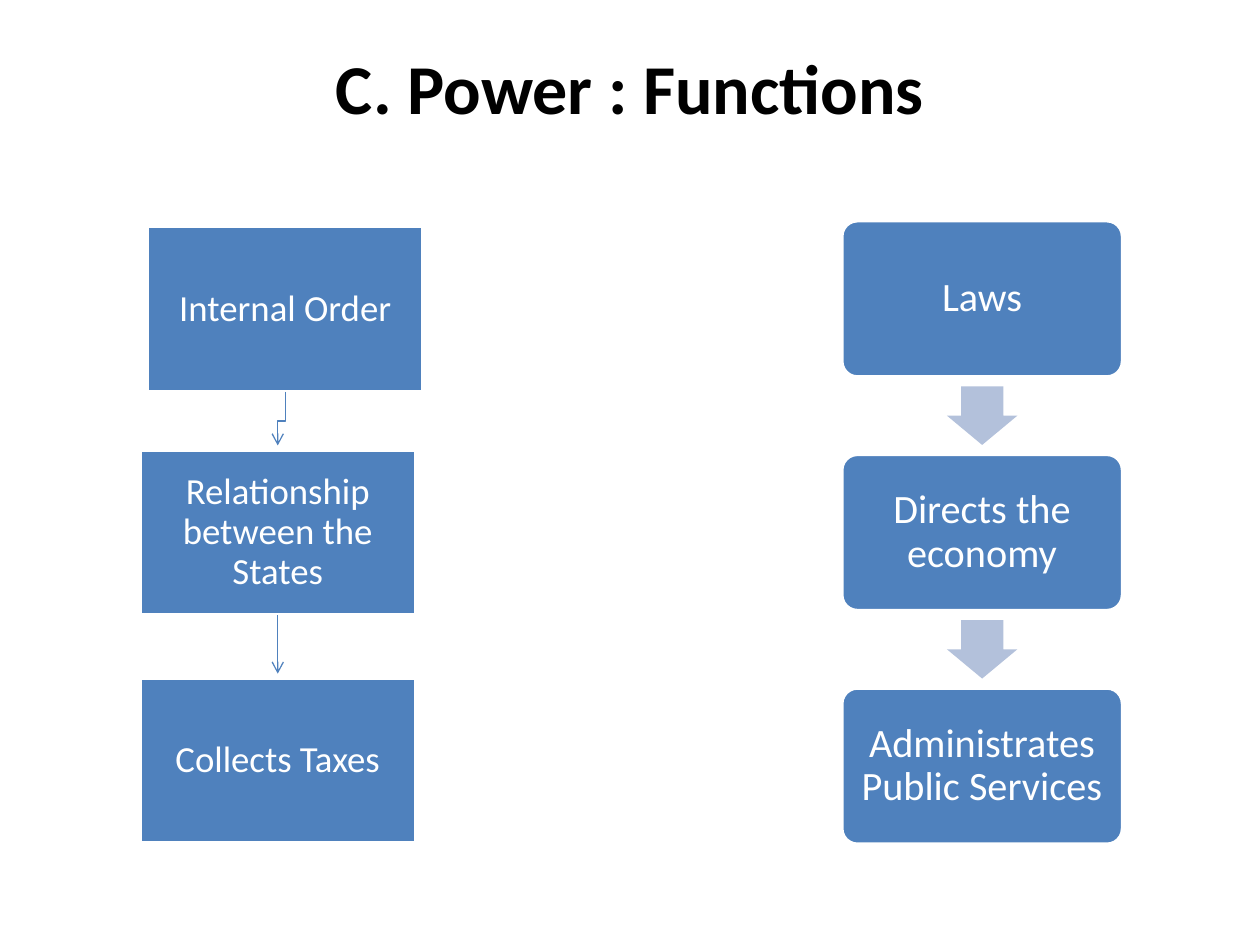
from dataclasses import dataclass

from lxml import etree
from pptx import Presentation
from pptx.dml.color import RGBColor
from pptx.enum.shapes import MSO_CONNECTOR, MSO_SHAPE
from pptx.enum.text import MSO_ANCHOR, PP_ALIGN
from pptx.oxml.ns import qn
from pptx.util import Cm, Pt

RECTANGLE = MSO_SHAPE.RECTANGLE
ROUNDED_RECTANGLE = MSO_SHAPE.ROUNDED_RECTANGLE
DOWN_ARROW = MSO_SHAPE.DOWN_ARROW
STRAIGHT = MSO_CONNECTOR.STRAIGHT
CENTER = PP_ALIGN.CENTER
MIDDLE = MSO_ANCHOR.MIDDLE
BOTTOM_SITE = 0 + 2

FONT = "Calibri"
COLORS = {"title": "000000", "box": "4F81BD", "arrow": "B3C1DB", "white": "FFFFFF"}


@dataclass(frozen=True)
class Box:
    label: str
    left: float
    top: float


@dataclass(frozen=True)
class BoxStyle:
    preset: int
    width: float
    height: float
    margin: float
    font_size: int


FUNCTION_STYLE = BoxStyle(RECTANGLE, 5.56, 3.33, 0.41, 21)
PROCESS_STYLE = BoxStyle(ROUNDED_RECTANGLE, 5.66, 3.15, 0.25, 23)

FUNCTIONS = [
    Box("Internal Order", 2.97, 4.57),
    Box("Relationship between the States", 2.82, 9.07),
    Box("Collects Taxes", 2.82, 13.67),
]
PROCESS_LABELS = ["Laws", "Directs the economy", "Administrates Public Services"]
PROCESS_LEFT, PROCESS_TOP, PROCESS_PITCH = 16.97, 4.45, 4.71
ARROW_WIDTH, ARROW_HEIGHT = 1.42, 1.18
ARROW_GAP = 0.09


def color(name: str) -> RGBColor:
    return RGBColor.from_string(COLORS[name])


def write_text(frame, text: str, size: int, color_name: str, bold: bool = False):
    frame.word_wrap = True
    paragraph = frame.paragraphs[0]
    paragraph.alignment = CENTER
    run = paragraph.add_run()
    run.text = text
    run.font.name = FONT
    run.font.size = Pt(size)
    run.font.bold = bold
    run.font.color.rgb = color(color_name)
    return paragraph


def add_title(slide, text: str) -> None:
    shape = slide.shapes.add_textbox(Cm(3.81), Cm(0.78), Cm(17.78), Cm(3.2))
    write_text(shape.text_frame, text, 40, "title", bold=True)


def add_box(slide, box: Box, style: BoxStyle):
    shape = slide.shapes.add_shape(
        style.preset, Cm(box.left), Cm(box.top), Cm(style.width), Cm(style.height)
    )
    shape.shadow.inherit = False
    shape.fill.solid()
    shape.fill.fore_color.rgb = color("box")
    shape.line.color.rgb = color("white")
    shape.line.width = Pt(2)
    if style.preset == ROUNDED_RECTANGLE:
        shape.adjustments[0] = 0.1
    frame = shape.text_frame
    frame.vertical_anchor = MIDDLE
    frame.margin_left = frame.margin_right = Cm(style.margin)
    frame.margin_top = frame.margin_bottom = Cm(style.margin)
    paragraph = write_text(frame, box.label, style.font_size, "white")
    paragraph.line_spacing = 0.9
    return shape


def style_arrow_line(line) -> None:
    line.color.rgb = color("box")
    line.width = Pt(0.75)
    etree.SubElement(line._get_or_add_ln(), qn("a:tailEnd"), type="arrow")


def add_elbow_arrow(slide, upper, lower) -> None:
    start_x = upper.left + upper.width // 2
    end_x = lower.left + lower.width // 2
    start_y = upper.top + upper.height
    end_y = lower.top - Cm(ARROW_GAP)
    middle_y = (start_y + end_y) // 2 + Cm(0.05)
    builder = slide.shapes.build_freeform(start_x, start_y)
    builder.add_line_segments(
        [(start_x, middle_y), (end_x, middle_y), (end_x, end_y)], close=False
    )
    shape = builder.convert_to_shape()
    shape.shadow.inherit = False
    shape.fill.background()
    style_arrow_line(shape.line)


def add_straight_arrow(slide, upper, lower) -> None:
    center_x = lower.left + lower.width // 2
    connector = slide.shapes.add_connector(
        STRAIGHT, center_x, upper.top + upper.height, center_x, lower.top - Cm(ARROW_GAP)
    )
    connector.begin_connect(upper, BOTTOM_SITE)
    style_arrow_line(connector.line)
    etree.SubElement(connector._element.spPr, qn("a:effectLst"))


def add_block_arrow(slide, upper, lower) -> None:
    center_x = upper.left + upper.width // 2
    center_y = (upper.top + upper.height + lower.top) // 2
    width, height = Cm(ARROW_WIDTH), Cm(ARROW_HEIGHT)
    shape = slide.shapes.add_shape(
        DOWN_ARROW, center_x - width // 2, center_y - height // 2, width, height
    )
    shape.shadow.inherit = False
    shape.adjustments[0] = 0.6
    shape.adjustments[1] = 0.5
    shape.fill.solid()
    shape.fill.fore_color.rgb = color("arrow")
    shape.line.fill.background()


def main() -> None:
    presentation = Presentation()
    presentation.slide_width = Cm(25.4)
    presentation.slide_height = Cm(19.05)
    slide = presentation.slides.add_slide(presentation.slide_layouts[6])

    add_title(slide, "C. Power : Functions")

    order, relationship, taxes = [add_box(slide, box, FUNCTION_STYLE) for box in FUNCTIONS]
    add_elbow_arrow(slide, order, relationship)
    add_straight_arrow(slide, relationship, taxes)

    steps = [
        add_box(slide, Box(label, PROCESS_LEFT, PROCESS_TOP + row * PROCESS_PITCH), PROCESS_STYLE)
        for row, label in enumerate(PROCESS_LABELS)
    ]
    for upper, lower in zip(steps, steps[1:]):
        add_block_arrow(slide, upper, lower)

    presentation.save("out.pptx")


if __name__ == "__main__":
    main()
